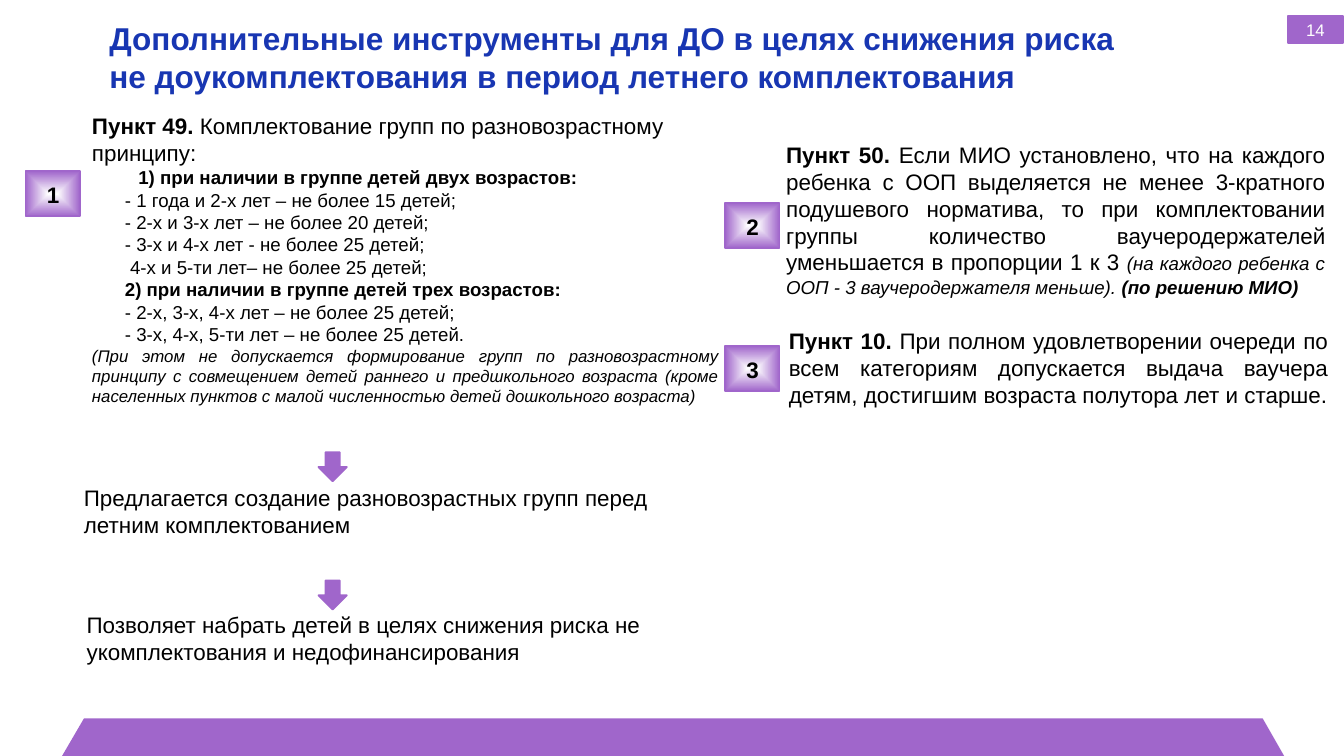
from typing import NamedTuple

from lxml.etree import SubElement
from pptx import Presentation
from pptx.dml.color import RGBColor
from pptx.enum.shapes import MSO_SHAPE
from pptx.enum.text import MSO_ANCHOR, PP_ALIGN
from pptx.oxml.ns import qn
from pptx.util import Inches, Pt

PURPLE, BLUE, BLACK, WHITE = "A066CB", "1836B2", "000000", "FFFFFF"
FONT = "Arial"
JUSTIFY = PP_ALIGN.JUSTIFY
BADGE_WIDTH, BADGE_HEIGHT = 0.81, 0.67


class Run(NamedTuple):
    text: str
    size: float = 24
    bold: bool = False
    italic: bool = False


class Block(NamedTuple):
    runs: list[Run]
    align: PP_ALIGN = PP_ALIGN.LEFT
    margin: float = 0
    indent: float = 0


class Badge(NamedTuple):
    number: str
    left: float
    top: float


def color(value: str) -> RGBColor:
    return RGBColor.from_string(value)


def list_item(text: str, bold: bool = False, align: PP_ALIGN = PP_ALIGN.LEFT) -> Block:
    return Block([Run(text, 20, bold)], align, 0.4, 0.09)


def add_text(slide, left: float, top: float, width: float, height: float,
             blocks: list[Block], font_color: str = BLACK) -> None:
    text_box = slide.shapes.add_textbox(Inches(left), Inches(top), Inches(width), Inches(height))
    frame = text_box.text_frame
    frame.word_wrap = True
    for index, block in enumerate(blocks):
        paragraph = frame.add_paragraph() if index else frame.paragraphs[0]
        paragraph.alignment = block.align
        paragraph.font.name = FONT
        paragraph.font.color.rgb = color(font_color)
        if block.margin:
            properties = paragraph._p.get_or_add_pPr()
            properties.set("marL", str(Inches(block.margin)))
            properties.set("indent", str(Inches(block.indent)))
        for item in block.runs:
            run = paragraph.add_run()
            run.text = item.text
            run.font.name = FONT
            run.font.color.rgb = color(font_color)
            run.font.size = Pt(item.size)
            run.font.bold = item.bold
            run.font.italic = item.italic


def add_box(slide, kind: MSO_SHAPE, left: float, top: float, width: float, height: float):
    shape = slide.shapes.add_shape(kind, Inches(left), Inches(top), Inches(width), Inches(height))
    shape.shadow.inherit = False
    shape.fill.solid()
    shape.fill.fore_color.rgb = color(PURPLE)
    shape.line.color.rgb = color(PURPLE)
    shape.line.width = Pt(2)
    return shape


def add_badge(slide, badge: Badge) -> None:
    """Draw a square glowing from its centre, with a number on it."""
    shape = add_box(slide, MSO_SHAPE.RECTANGLE, badge.left, badge.top, BADGE_WIDTH, BADGE_HEIGHT)
    shape.fill.gradient()
    for stop, value in zip(shape.fill.gradient_stops, (WHITE, PURPLE)):
        stop.color.rgb = color(value)
    gradient = shape._element.spPr.find(qn("a:gradFill"))
    gradient.remove(gradient.find(qn("a:lin")))
    shape_path = SubElement(gradient, qn("a:path"), {"path": "shape"})
    SubElement(shape_path, qn("a:fillToRect"), dict.fromkeys("ltrb", "50000"))
    add_text(slide, badge.left + 0.22, badge.top + 0.1, 0.45, 0.5,
             [Block([Run(badge.number, bold=True)])])


def add_footer(slide) -> None:
    builder = slide.shapes.build_freeform(Inches(18.79), Inches(10.69), scale=1.0)
    corners = [(1.25, 10.69), (0.76, 11.53), (1.25, 12.38), (18.79, 12.38), (19.27, 11.53)]
    builder.add_line_segments([(Inches(x), Inches(y)) for x, y in corners], close=True)
    footer = builder.convert_to_shape()
    footer.shadow.inherit = False
    footer.fill.solid()
    footer.fill.fore_color.rgb = color(PURPLE)
    footer.line.fill.background()


def add_page_number(slide, number: str) -> None:
    shape = add_box(slide, MSO_SHAPE.RECTANGLE, 19.17, 0.24, 0.81, 0.4)
    shape.text_frame.vertical_anchor = MSO_ANCHOR.MIDDLE
    paragraph = shape.text_frame.paragraphs[0]
    paragraph.text = number
    paragraph.alignment = PP_ALIGN.CENTER
    paragraph.font.name = FONT
    paragraph.font.size = Pt(18)
    paragraph.font.color.rgb = color(WHITE)


TITLE = [
    Block([Run("Дополнительные инструменты для ДО в целях снижения риска", 33.8, True)]),
    Block([Run("не доукомплектования в период летнего комплектования", 33.8, True)]),
]
POINT_49 = [
    Block([Run("Пункт 49. ", bold=True),
           Run("Комплектование групп по разновозрастному принципу:")]),
    Block([Run("1) при наличии в группе детей двух возрастов:", 20, True)], margin=0.69),
    list_item("- 1 года и 2-х лет – не более 15 детей;"),
    list_item("- 2-х и 3-х лет – не более 20 детей;"),
    list_item("- 3-х и 4-х лет - не более 25 детей;", align=JUSTIFY),
    list_item(" 4-х и 5-ти лет– не более 25 детей;"),
    list_item("2) при наличии в группе детей трех возрастов:", bold=True),
    list_item("- 2-х, 3-х, 4-х лет – не более 25 детей;"),
    list_item("- 3-х, 4-х, 5-ти лет – не более 25 детей."),
    Block([Run("(При этом не допускается формирование групп по разновозрастному принципу "
               "с совмещением детей раннего и предшкольного возраста (кроме населенных пунктов "
               "с малой численностью детей дошкольного возраста)", 18, italic=True)], JUSTIFY),
]
POINT_50 = [Block([
    Run("Пункт 50. ", bold=True),
    Run("Если МИО установлено, что на каждого ребенка с ООП выделяется не менее 3-кратного "
        "подушевого норматива, то при комплектовании группы количество ваучеродержателей "
        "уменьшается в пропорции 1 к 3 "),
    Run("(на каждого ребенка с ООП - 3 ваучеродержателя меньше). ", 20, italic=True),
    Run("(по решению МИО)", 20, True, True),
], JUSTIFY)]
POINT_10 = [Block([
    Run("Пункт 10. ", bold=True),
    Run("При полном удовлетворении очереди по всем категориям допускается выдача ваучера "
        "детям, достигшим возраста полутора лет и старше."),
], JUSTIFY)]
PROPOSAL = [Block([Run("Предлагается создание разновозрастных групп перед летним комплектованием")])]
RESULT = [Block([Run("Позволяет набрать детей в целях снижения риска не укомплектования "
                     "и недофинансирования")])]
BADGES = [Badge("1", 0.38, 2.55), Badge("2", 10.79, 3.02), Badge("3", 10.79, 5.15)]
ARROW_TOPS = [6.73, 8.64]


def main() -> None:
    presentation = Presentation()
    presentation.slide_width = Inches(20)
    presentation.slide_height = Inches(11.25)
    slide = presentation.slides.add_slide(presentation.slide_layouts[6])

    add_footer(slide)
    add_page_number(slide, "14")
    add_text(slide, 1.53, 0.24, 17.47, 1.24, TITLE, BLUE)
    add_text(slide, 1.27, 1.62, 9.52, 4.51, POINT_49)
    add_text(slide, 1.15, 7.16, 9.52, 0.91, PROPOSAL)
    add_text(slide, 1.19, 9.04, 9.52, 0.91, RESULT)
    for top in ARROW_TOPS:
        add_box(slide, MSO_SHAPE.DOWN_ARROW, 4.74, top, 0.42, 0.43)
    for badge in BADGES:
        add_badge(slide, badge)
    add_text(slide, 11.6, 2.05, 8.22, 2.46, POINT_50)
    add_text(slide, 11.64, 4.82, 8.22, 1.31, POINT_10)
    presentation.save("out.pptx")


if __name__ == "__main__":
    main()
